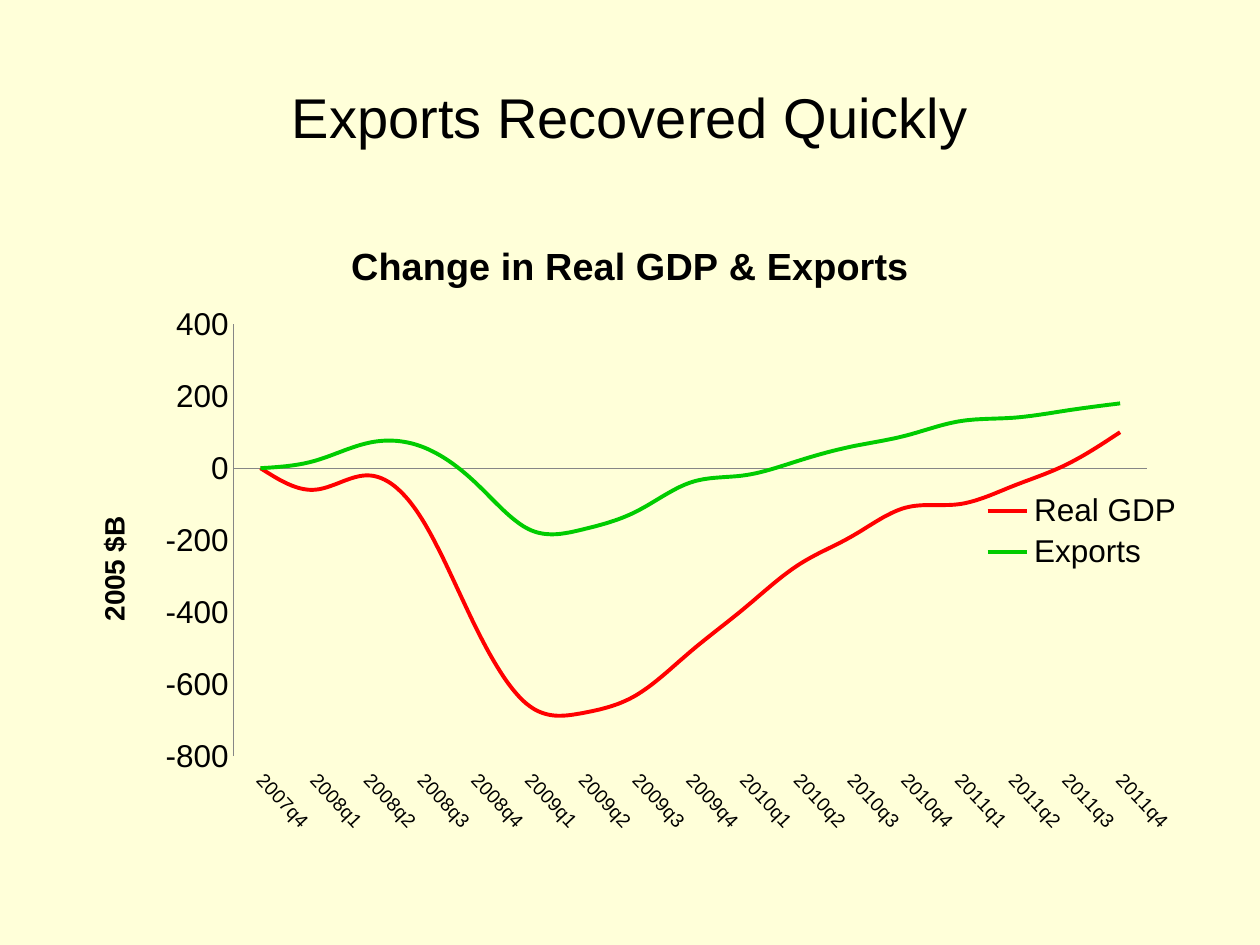
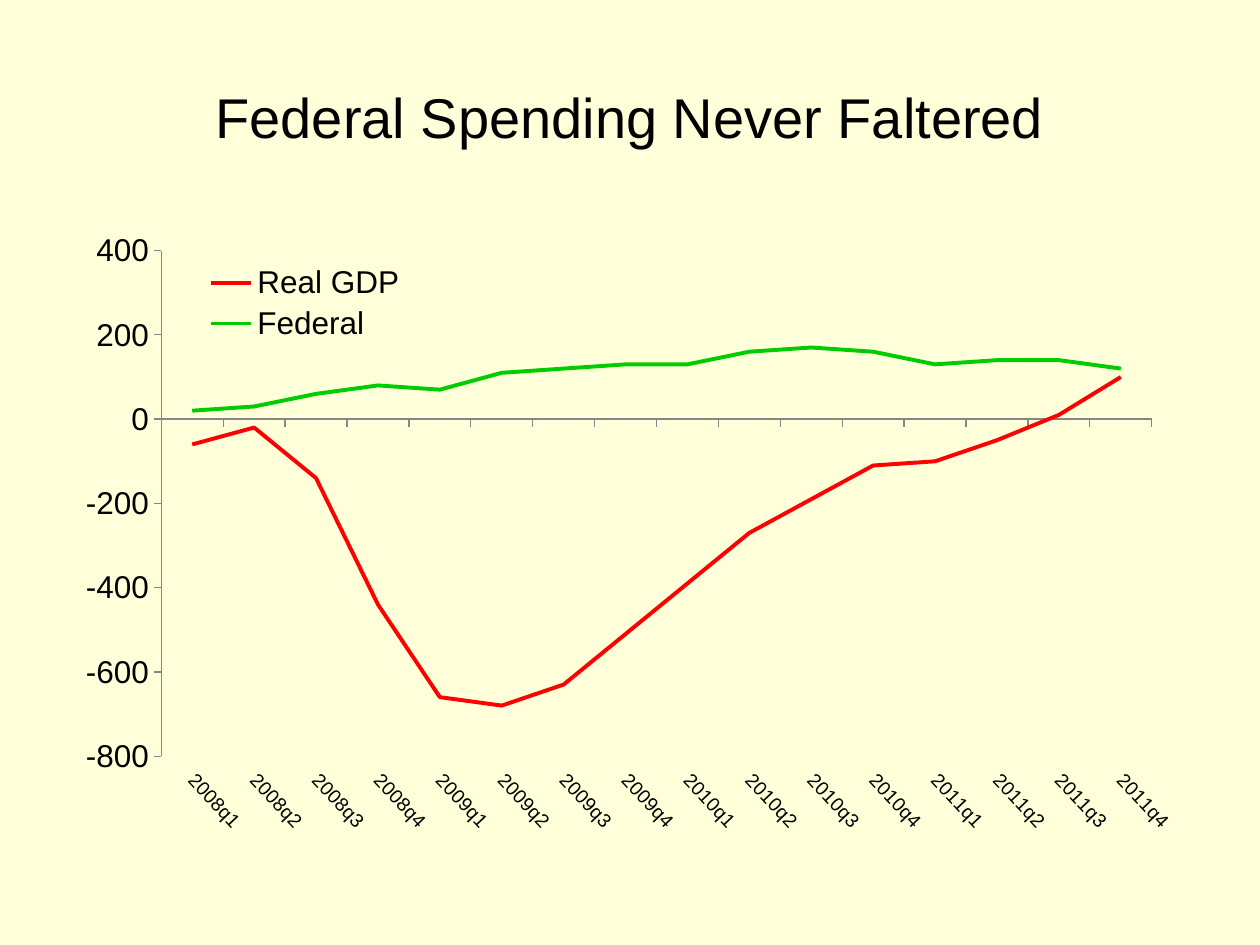
from lxml.etree import SubElement
from pptx import Presentation
from pptx.chart.data import CategoryChartData
from pptx.dml.color import RGBColor
from pptx.enum.chart import XL_CHART_TYPE, XL_LEGEND_POSITION, XL_TICK_LABEL_POSITION, XL_TICK_MARK
from pptx.enum.text import MSO_ANCHOR, PP_ALIGN
from pptx.oxml.ns import qn
from pptx.util import Cm, Pt

CREAM = RGBColor(0xFF, 0xFF, 0xD9)
BLACK = RGBColor(0, 0, 0)
GREY = RGBColor(0x86, 0x86, 0x86)
RED = RGBColor(0xFF, 0, 0)
GREEN = RGBColor(0, 0xCC, 0)
FONT = "Arial"
DEGREE = 60000

# Boxes: left, top, width, height
HEADING_BOX = (Cm(1.27), Cm(0.76), Cm(22.86), Cm(3.18))
CHART_BOX = (Cm(1.27), Cm(4.45), Cm(22.86), Cm(12.57))

# Quarterly change since 2007q4, in billions of 2005 dollars
QUARTERS = ["2007q4"] + [f"{year}q{q}" for year in range(2008, 2012) for q in range(1, 5)]
GDP = [0, -60, -20, -140, -440, -660, -680, -630, -510, -390, -270, -190, -110, -100, -50, 10, 100]
EXPORTS = [0, 20, 70, 60, -40, -170, -170, -120, -40, -20, 20, 60, 90, 130, 140, 160, 180]
FEDERAL = [20, 30, 60, 80, 70, 110, 120, 130, 130, 160, 170, 160, 130, 140, 140, 120]


def style_font(font, size, bold=False):
    font.name = FONT
    font.size = Pt(size)
    font.bold = bold
    font.color.rgb = BLACK


def add_heading(slide, wording, box):
    heading = slide.shapes.add_textbox(*box)
    frame = heading.text_frame
    frame.word_wrap = True
    frame.vertical_anchor = MSO_ANCHOR.MIDDLE
    line = frame.paragraphs[0]
    line.alignment = PP_ALIGN.CENTER
    run = line.add_run()
    run.text = wording
    style_font(run.font, 32)


def place(element, x, y, w=None, h=None):
    """Fix a chart part at percentages of the chart's box."""
    layout = element.find(qn("c:layout"))
    if layout is None:
        layout = SubElement(element, qn("c:layout"))
        element.insert(0 if element.tag == qn("c:plotArea") else 1, layout)
    for child in list(layout):
        layout.remove(child)
    manual = SubElement(layout, qn("c:manualLayout"))
    if element.tag == qn("c:plotArea"):
        SubElement(manual, qn("c:layoutTarget")).set("val", "inner")
    for tag in ("xMode", "yMode"):
        SubElement(manual, qn(f"c:{tag}")).set("val", "edge")
    for tag, percent in (("x", x), ("y", y), ("w", w), ("h", h)):
        if percent is not None:
            SubElement(manual, qn(f"c:{tag}")).set("val", f"{percent / 100:.4f}")


def add_caption(owner, wording, size, x, y):
    """Give a chart or an axis a bold title at a fixed place."""
    owner.has_title = True
    caption = owner.chart_title if hasattr(owner, "chart_title") else owner.axis_title
    run = caption.text_frame.paragraphs[0].add_run()
    run.text = wording
    style_font(run.font, size, bold=True)
    place(caption._element, x, y)
    return caption


def style_axes(chart, tick_mark):
    quarters, dollars = chart.category_axis, chart.value_axis
    for axis, size in ((quarters, 11), (dollars, 18)):
        axis.has_major_gridlines = False
        axis.major_tick_mark = tick_mark
        axis.minor_tick_mark = XL_TICK_MARK.NONE
        axis.format.line.color.rgb = GREY
        axis.format.line.width = Pt(0.75)
        style_font(axis.tick_labels.font, size)
    quarters.tick_label_position = XL_TICK_LABEL_POSITION.LOW
    # Slant the quarter labels
    quarters._element.find(qn("c:txPr")).find(qn("a:bodyPr")).set("rot", str(47 * DEGREE))
    dollars.minimum_scale, dollars.maximum_scale, dollars.major_unit = -800, 400, 200
    dollars.tick_labels.number_format = "General"
    dollars.tick_labels.number_format_is_linked = False


def add_trend_chart(slide, box, quarters, trends, plot, key, tick_mark, smooth):
    data = CategoryChartData()
    data.categories = quarters
    for name, values in trends.items():
        data.add_series(name, values)
    chart = slide.shapes.add_chart(XL_CHART_TYPE.LINE, *box, data).chart
    style_font(chart.font, 18)
    chart.has_title = False
    chart.plots[0].vary_by_categories = False
    for trend, colour in zip(chart.plots[0].series, (RED, GREEN)):
        trend.format.line.color.rgb = colour
        trend.format.line.width = Pt(2.25)
        trend.smooth = smooth
    style_axes(chart, tick_mark)
    place(chart._chartSpace.chart.plotArea, *plot)
    # Legend lies over the plot
    chart.has_legend = True
    chart.legend.position = XL_LEGEND_POSITION.RIGHT
    chart.legend.include_in_layout = True
    style_font(chart.legend.font, 18)
    place(chart.legend._element, *key)
    return chart


def new_slide(deck, heading):
    slide = deck.slides.add_slide(deck.slide_layouts[6])
    slide.background.fill.solid()
    slide.background.fill.fore_color.rgb = CREAM
    add_heading(slide, heading, HEADING_BOX)
    return slide


def build_exports_slide(deck):
    slide = new_slide(deck, "Exports Recovered Quickly")
    chart = add_trend_chart(
        slide, CHART_BOX, QUARTERS, {"Real GDP": GDP, "Exports": EXPORTS},
        plot=(15.05, 16.6, 80.55, 69.3), key=(80.85, 42.8, 18, 14),
        tick_mark=XL_TICK_MARK.NONE, smooth=True)
    add_caption(chart, "Change in Real GDP & Exports", 21.6, 24.8, 2.2)
    unit = add_caption(chart.value_axis, "2005 $B", 16, 2.5, 46.7)
    unit.text_frame._txBody.find(qn("a:bodyPr")).set("rot", str(-90 * DEGREE))


def build_federal_slide(deck):
    slide = new_slide(deck, "Federal Spending Never Faltered")
    add_trend_chart(
        slide, CHART_BOX, QUARTERS[1:], {"Real GDP": GDP[1:], "Federal": FEDERAL},
        plot=(8.67, 4.8, 87.35, 81.1), key=(12.35, 6.2, 18, 14),
        tick_mark=XL_TICK_MARK.OUTSIDE, smooth=False)


def main():
    deck = Presentation()
    deck.slide_width, deck.slide_height = Cm(25.4), Cm(19.05)
    build_exports_slide(deck)
    build_federal_slide(deck)
    deck.save("out.pptx")


if __name__ == "__main__":
    main()
